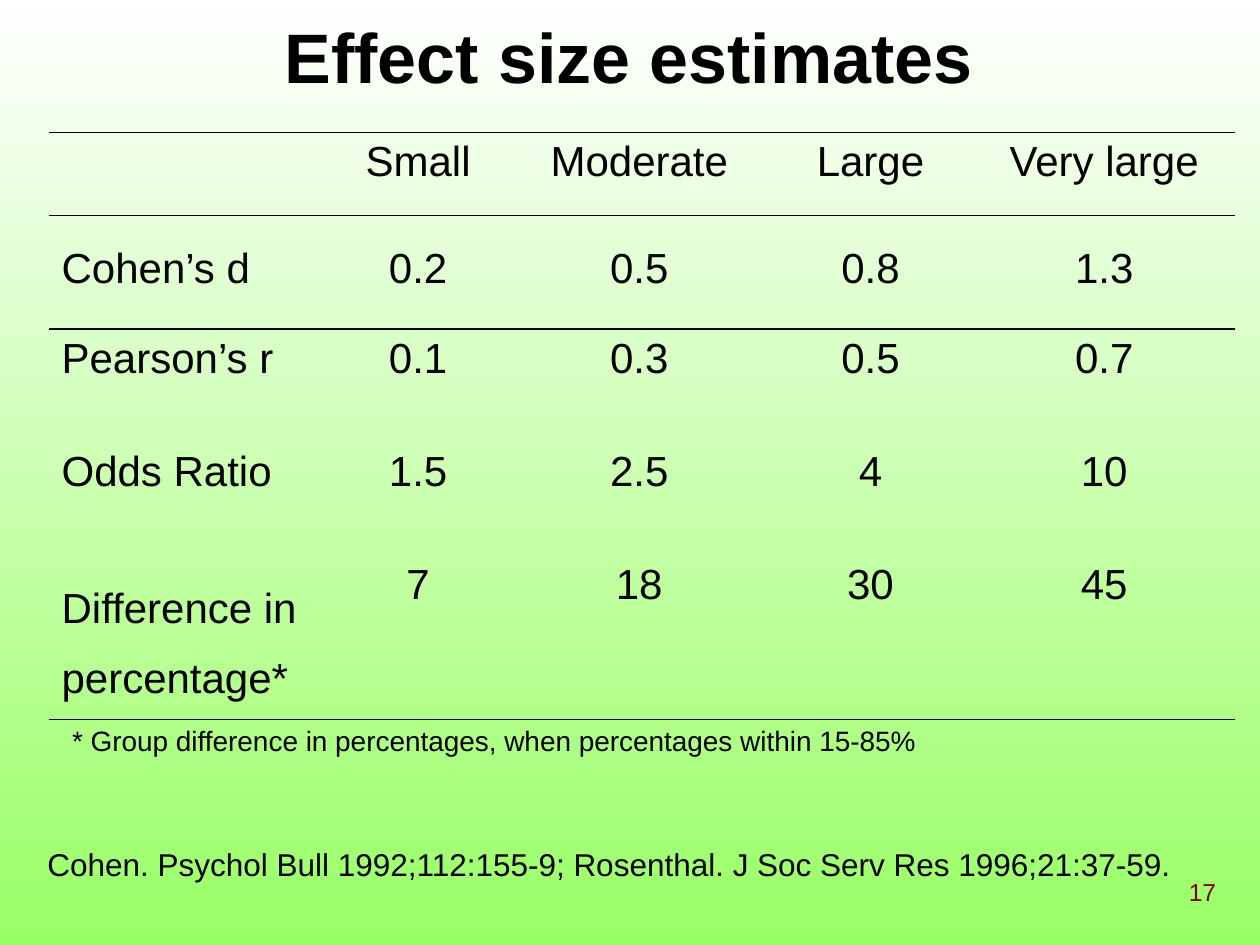
"""Build the slide "Effect size estimates" with its table of effect size thresholds."""
from lxml.etree import SubElement
from pptx import Presentation
from pptx.dml.color import RGBColor
from pptx.enum.text import MSO_ANCHOR, PP_ALIGN
from pptx.oxml.ns import qn
from pptx.util import Pt

TITLE = "Effect size estimates"
ROWS = [
    ("", "Small", "Moderate", "Large", "Very large"),
    ("Cohen’s d", "0.2", "0.5", "0.8", "1.3"),
    ("Pearson’s r", "0.1", "0.3", "0.5", "0.7"),
    ("Odds Ratio", "1.5", "2.5", "4", "10"),
    ("Difference in percentage*", "7", "18", "30", "45"),
]
FOOTNOTE = "* Group difference in percentages, when percentages within 15-85%"
SOURCES = "Cohen. Psychol Bull 1992;112:155-9; Rosenthal. J Soc Serv Res 1996;21:37-59. "
PAGE = "17"

COLORS = {"top": "FFFFFF", "bottom": "99FF66", "ink": "000000", "page": "800000"}
FONT = "Arial"
COLUMN_WIDTHS = [157.7, 106.5, 146.2, 118.1, 149]
ROW_HEIGHTS = [47.5, 64.8, 64.8, 64.8, 93.6]
RULES = {0: ("lnT", "lnB"), 1: ("lnT",), 4: ("lnB",)}
WIDE_SPACED = {(1, column) for column in range(5)} | {(4, 0)}
NO_GRID_STYLE = "{2D5ABB26-0587-4C30-8999-92F81FD0307C}"


def write(frame, text, size=24, color="ink", bold=False, align=PP_ALIGN.LEFT, spacing=None):
    paragraph = frame.paragraphs[0]
    paragraph.alignment = align
    paragraph.line_spacing = spacing
    run = paragraph.add_run()
    run.text = text
    run.font.name = FONT
    run.font.size = Pt(size)
    run.font.bold = bold
    run.font.color.rgb = RGBColor.from_string(COLORS[color])


def add_text(slide, box, text, wrap=False, anchor=MSO_ANCHOR.TOP, **style):
    frame = slide.shapes.add_textbox(*map(Pt, box)).text_frame
    frame.word_wrap = wrap
    frame.vertical_anchor = anchor
    write(frame, text, **style)


def rule(cell, side):
    line = SubElement(cell._tc.get_or_add_tcPr(), qn(f"a:{side}"), w=str(Pt(1)))
    fill = SubElement(line, qn("a:solidFill"))
    SubElement(fill, qn("a:srgbClr"), val=COLORS["ink"])


def add_estimates(slide):
    frame = slide.shapes.add_table(
        len(ROWS), len(COLUMN_WIDTHS), Pt(28), Pt(75.6),
        Pt(sum(COLUMN_WIDTHS)), Pt(sum(ROW_HEIGHTS)))
    table = frame.table
    table.first_row = table.horz_banding = False
    table._tbl.tblPr.find(qn("a:tableStyleId")).text = NO_GRID_STYLE
    for column, width in zip(table.columns, COLUMN_WIDTHS):
        column.width = Pt(width)
    for r, (row, height) in enumerate(zip(ROWS, ROW_HEIGHTS)):
        table.rows[r].height = Pt(height)
        for c, text in enumerate(row):
            cell = table.cell(r, c)
            for side in RULES.get(r, ()):
                rule(cell, side)
            cell.fill.background()
            if text:
                write(cell.text_frame, text,
                      align=PP_ALIGN.CENTER if c else PP_ALIGN.LEFT,
                      spacing=1.5 if (r, c) in WIDE_SPACED else None)


def main():
    deck = Presentation()
    deck.slide_width, deck.slide_height = Pt(720), Pt(540)
    slide = deck.slides.add_slide(deck.slide_layouts[6])

    backdrop = slide.background.fill
    backdrop.gradient()
    backdrop.gradient_angle = 270
    for stop, position, name in zip(backdrop.gradient_stops, (0, 1), ("top", "bottom")):
        stop.position = position
        stop.color.rgb = RGBColor.from_string(COLORS[name])

    add_text(slide, (552.2, 491.8, 149.8, 36), PAGE, anchor=MSO_ANCHOR.MIDDLE,
             size=14, color="page", align=PP_ALIGN.RIGHT)
    add_text(slide, (155.5, -7.2, 480.2, 90), TITLE, wrap=True,
             anchor=MSO_ANCHOR.MIDDLE, size=40, bold=True, spacing=0.7)
    add_estimates(slide)
    add_text(slide, (31, 409.7, 502.6, 26.6), FOOTNOTE, size=16, align=PP_ALIGN.CENTER)
    add_text(slide, (19.4, 479.5, 662.4, 28.8), SOURCES, size=18, align=PP_ALIGN.CENTER)
    deck.save("out.pptx")


if __name__ == "__main__":
    main()
